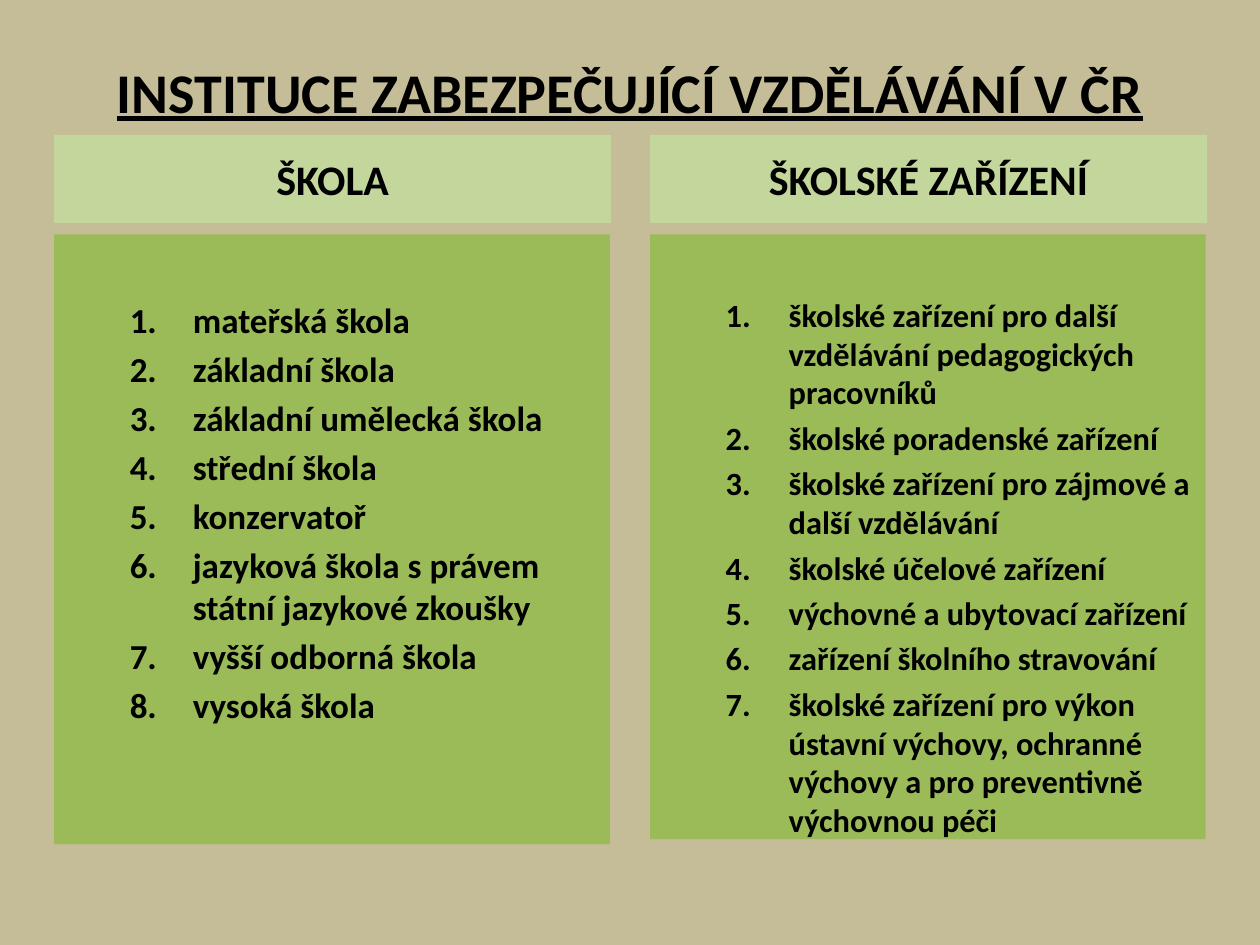
from lxml.etree import SubElement
from pptx import Presentation
from pptx.dml.color import RGBColor
from pptx.enum.text import MSO_ANCHOR, MSO_AUTO_SIZE, PP_ALIGN
from pptx.oxml.ns import qn
from pptx.util import Inches, Pt


def paint(fill, color):
    fill.solid()
    fill.fore_color.rgb = RGBColor.from_string(color)


def write(shape, box, lines, size, frame_format, paragraph_format, underline=None):
    for name, value in zip(("left", "top", "width", "height"), box):
        setattr(shape, name, Inches(value))
    frame = shape.text_frame
    frame.text = "\n".join(lines)
    for name, value in {"auto_size": MSO_AUTO_SIZE.NONE, "word_wrap": True, **frame_format}.items():
        setattr(frame, name, value)
    font_format = {"name": "Calibri", "size": Pt(size), "bold": True, "underline": underline}
    for paragraph in frame.paragraphs:
        for name, value in paragraph_format.items():
            setattr(paragraph, name, value)
        for name, value in font_format.items():
            setattr(paragraph.runs[0].font, name, value)
        paint(paragraph.runs[0].font.fill, "000000")


presentation = Presentation()
presentation.slide_width = Inches(10)
presentation.slide_height = Inches(7.5)
slide = presentation.slides.add_slide(presentation.slide_layouts.get_by_name("Comparison"))
paint(slide.background.fill, "C4BD97")

centered = {"alignment": PP_ALIGN.CENTER}
middle = {"vertical_anchor": MSO_ANCHOR.MIDDLE}
write(slide.shapes.title, (0.5, 0.21, 9, 1.02), ["INSTITUCE ZABEZPEČUJÍCÍ VZDĚLÁVÁNÍ V ČR"],
      32, middle, centered, underline=True)

columns = [
    ("ŠKOLA", 20, 4.84, 0.51, [
        "mateřská škola",
        "základní škola",
        "základní umělecká škola",
        "střední škola",
        "konzervatoř",
        "jazyková škola s právem státní jazykové zkoušky",
        "vyšší odborná škola",
        "vysoká škola",
    ]),
    ("ŠKOLSKÉ ZAŘÍZENÍ", 18.5, 4.8, 0.48, [
        "školské zařízení pro další vzdělávání pedagogických pracovníků",
        "školské poradenské zařízení",
        "školské zařízení pro zájmové a další vzdělávání",
        "školské účelové zařízení",
        "výchovné a ubytovací zařízení",
        "zařízení školního stravování",
        "školské zařízení pro výkon ústavní výchovy, ochranné výchovy a pro preventivně výchovnou péči",
    ]),
]
bodies = list(slide.placeholders)[1:]
for column, (heading, size, height, inset, items) in enumerate(columns):
    header, panel = bodies[2 * column:2 * column + 2]
    left = 0.43 + column * 4.73
    paint(header.fill, "C3D69B")
    paint(panel.fill, "9BBB59")
    write(header, (left, 1.07, 4.42, 0.7), [heading], 24, middle, centered)
    write(panel, (left, 1.86, 4.41, height), items, size,
          {"vertical_anchor": MSO_ANCHOR.TOP, "margin_top": Inches(inset)},
          {"level": 1, "space_before": Pt(size * 0.2)})
    for paragraph in panel.text_frame.paragraphs:
        properties = paragraph._p.get_or_add_pPr()
        properties.set("marL", str(Inches(1)))
        properties.set("indent", str(Inches(-0.5)))
        SubElement(properties, qn("a:buFont"), typeface="+mj-lt")
        SubElement(properties, qn("a:buAutoNum"), type="arabicPeriod")

presentation.save("out.pptx")
